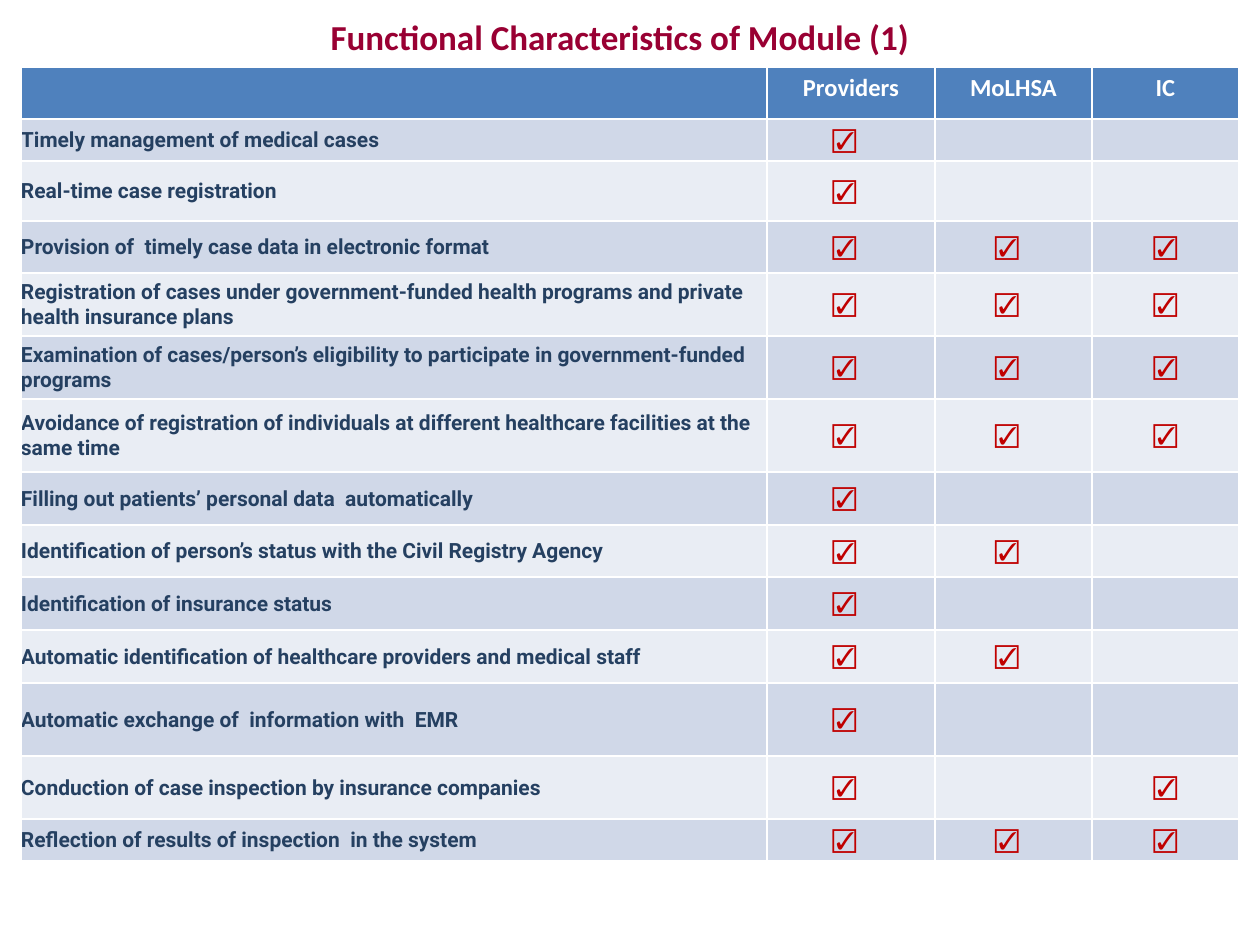
from pptx import Presentation
from pptx.dml.color import RGBColor
from pptx.enum.text import MSO_ANCHOR, PP_ALIGN
from pptx.util import Pt

CENTER, LEFT = PP_ALIGN.CENTER, PP_ALIGN.LEFT
MIDDLE, TOP = MSO_ANCHOR.MIDDLE, MSO_ANCHOR.TOP

# Content
TITLE = "Functional Characteristics of Module (1)"
HEADERS = ["", "Providers", "MoLHSA", "IC"]
MARK = "☑"
# Feature, row height in px, whether it applies to each party
FEATURES = [
    ("Timely management of medical cases", 42, (1, 0, 0)),
    ("Real-time case registration", 60, (1, 0, 0)),
    ("Provision of  timely case data in electronic format", 52, (1, 1, 1)),
    ("Registration of cases under government-funded health programs "
     "and private health insurance plans", 63, (1, 1, 1)),
    ("Examination of cases/person’s eligibility to participate in "
     "government-funded programs", 63, (1, 1, 1)),
    ("Avoidance of registration of individuals at different healthcare "
     "facilities at the same time", 73, (1, 1, 1)),
    ("Filling out patients’ personal data  automatically", 53, (1, 0, 0)),
    ("Identification of person’s status with the Civil Registry Agency", 52, (1, 1, 0)),
    ("Identification of insurance status", 53, (1, 0, 0)),
    ("Automatic identification of healthcare providers and medical staff", 53, (1, 1, 0)),
    ("Automatic exchange of  information with  EMR", 73, (1, 0, 0)),
    ("Conduction of case inspection by insurance companies", 63, (1, 0, 1)),
    ("Reflection of results of inspection  in the system", 42, (1, 1, 1)),
]

COLORS = {
    "title": "990033", "header": "4F81BD", "header text": "FFFFFF",
    "label": "254061", "mark": "C00000", "odd": "D0D8E8", "even": "E9EDF4",
}

# Layout in px
SLIDE_W, SLIDE_H = 1260, 945
TITLE_BOX = (53, 0, 1134, 73)
TABLE_LEFT, TABLE_TOP = 21, 67
COLUMNS = [746, 168, 157, 147]
HEADER_H = 52
# Cell margins: left, top, right, bottom
HEADER_MARGINS = (13, 6, 13, 6)
LABEL_MARGINS = (0, 1, 1, 0)
MARK_MARGINS = (0, 6, 13, 6)


def px(length):
    return round(length * 914400 / 126)


def color(name):
    return RGBColor.from_string(COLORS[name])


def write(frame, text, size, font, text_color, align, before=0):
    paragraph = frame.paragraphs[0]
    paragraph.text = text
    paragraph.alignment = align
    paragraph.space_before = Pt(before)
    paragraph.font.size = Pt(size)
    paragraph.font.name = font
    paragraph.font.bold = True
    paragraph.font.color.rgb = color(text_color)


def style(cell, fill, margins, anchor):
    cell.fill.solid()
    cell.fill.fore_color.rgb = color(fill)
    cell.vertical_anchor = anchor
    (cell.margin_left, cell.margin_top,
     cell.margin_right, cell.margin_bottom) = map(px, margins)


prs = Presentation()
prs.slide_width, prs.slide_height = px(SLIDE_W), px(SLIDE_H)
slide = prs.slides.add_slide(prs.slide_layouts[6])

# Title
title = slide.shapes.add_textbox(*map(px, TITLE_BOX)).text_frame
title.word_wrap = True
title.vertical_anchor = MIDDLE
write(title, TITLE, 20, "Calibri", "title", CENTER)

# Table grid; the default table style draws the white borders
heights = [HEADER_H] + [height for _, height, _ in FEATURES]
table = slide.shapes.add_table(
    len(heights), len(COLUMNS), px(TABLE_LEFT), px(TABLE_TOP),
    px(sum(COLUMNS)), px(sum(heights))).table
for column, width in zip(table.columns, COLUMNS):
    column.width = px(width)
for row, height in zip(table.rows, heights):
    row.height = px(height)

# Header row
for col, header in enumerate(HEADERS):
    cell = table.cell(0, col)
    style(cell, "header", HEADER_MARGINS, TOP)
    write(cell.text_frame, header, 14, "Calibri", "header text", CENTER)

# Feature rows
for row, (feature, _, parties) in enumerate(FEATURES, 1):
    band = "odd" if row % 2 else "even"
    label = table.cell(row, 0)
    style(label, band, LABEL_MARGINS, MIDDLE)
    write(label.text_frame, feature, 12, "Roboto", "label", LEFT, before=6)
    for col, applies in enumerate(parties, 1):
        cell = table.cell(row, col)
        last = col == len(parties)
        style(cell, band, HEADER_MARGINS if last else MARK_MARGINS, MIDDLE)
        write(cell.text_frame, MARK if applies else "", 14, "Calibri",
              "mark", CENTER, before=6)

prs.save("out.pptx")
